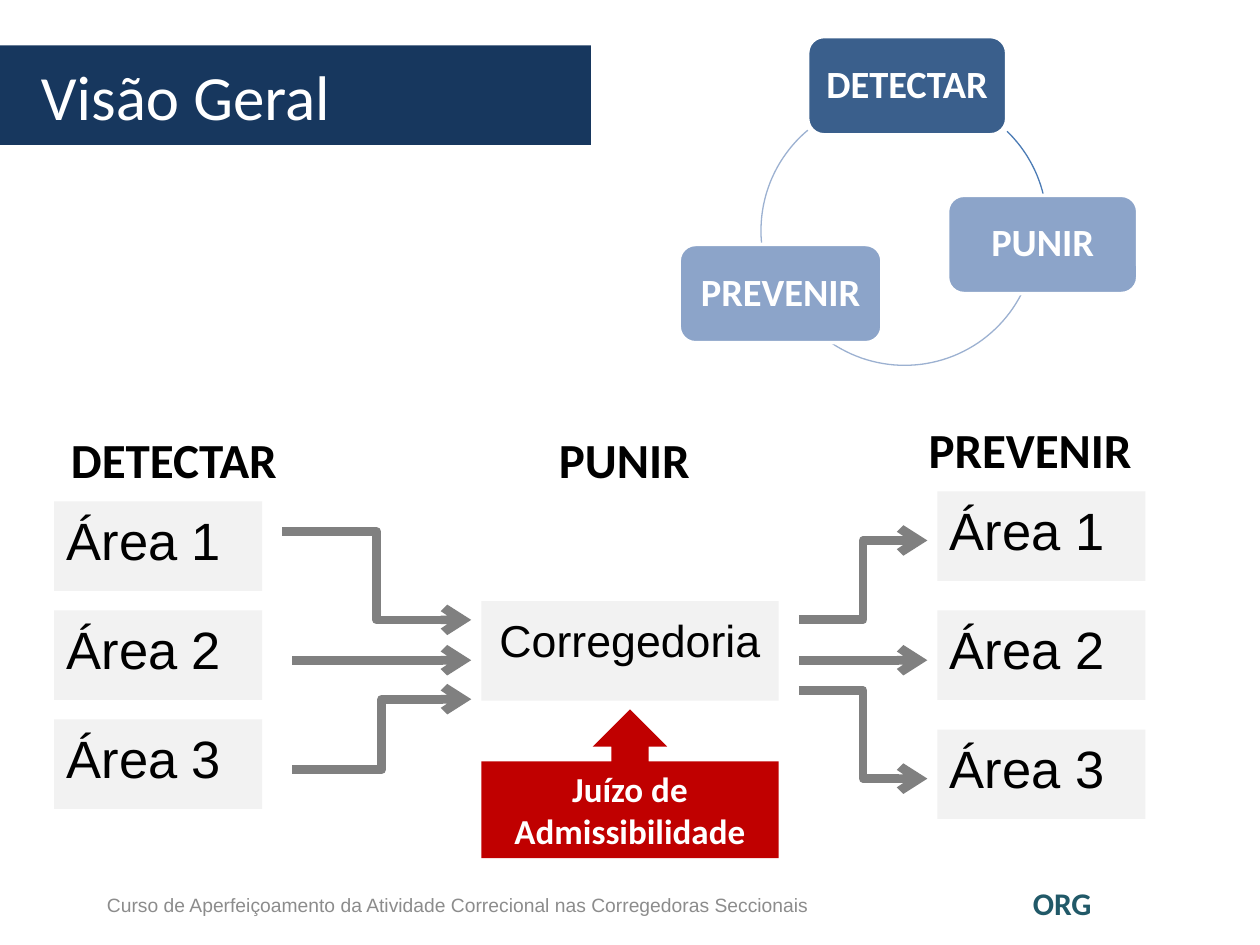
from dataclasses import dataclass
from math import cos, radians, sin

from lxml.etree import SubElement
from pptx import Presentation
from pptx.dml.color import RGBColor
from pptx.enum.shapes import MSO_CONNECTOR, MSO_SHAPE
from pptx.enum.text import MSO_ANCHOR, PP_ALIGN
from pptx.oxml.ns import qn
from pptx.util import Inches, Pt

COLS, ROWS = 100, 75
WIDE, HIGH = Inches(10), Inches(7.5)
HUES = {
    "navy": "17375E", "steel": "3A5F8C", "sky": "8CA4C9", "arc": "4B7BB5",
    "pale": "9CB1D1", "red": "C00000", "panel": "F2F2F2", "wire": "808080",
    "foot": "8C8C8C", "teal": "215968", "white": "FFFFFF", "black": "000000",
}


@dataclass
class Box:
    """A place on the grid of columns and rows."""
    col: float
    row: float
    wide: float
    high: float


@dataclass
class Style:
    """How a piece of text looks and sits."""
    size: float
    hue: str = "black"
    font: str = "Calibri"
    bold: bool = True
    align: PP_ALIGN = PP_ALIGN.CENTER
    anchor: MSO_ANCHOR = MSO_ANCHOR.MIDDLE
    left: float = 1
    top: float = 0.5
    lead: float = 1


@dataclass
class Wire:
    """An arrow between two grid points."""
    col: float
    row: float
    end: float
    stop: float


@dataclass
class Arc:
    """A part of a circle, in degrees clockwise from the right."""
    col: float
    row: float
    first: float
    last: float
    hue: str


def across(cols: float) -> int:
    """Turn columns into a length."""
    return round(WIDE * cols / COLS)


def down(rows: float) -> int:
    """Turn rows into a length."""
    return round(HIGH * rows / ROWS)


def tint(name: str) -> RGBColor:
    """Look up a colour."""
    return RGBColor.from_string(HUES[name])


def place(box: Box) -> tuple:
    """Give the left, top, width and height of a box."""
    return across(box.col), down(box.row), across(box.wide), down(box.high)


def write(shape, text: str, style: Style) -> None:
    """Set one run of text in a shape."""
    frame = shape.text_frame
    frame.word_wrap = True
    frame.vertical_anchor = style.anchor
    frame.margin_left, frame.margin_right = across(style.left), across(1)
    frame.margin_top, frame.margin_bottom = down(style.top), down(0.5)
    para = frame.paragraphs[0]
    para.alignment, para.line_spacing = style.align, style.lead
    run = para.add_run()
    run.text = text
    font = run.font
    font.name, font.size, font.bold = style.font, Pt(style.size), style.bold
    font.color.rgb = tint(style.hue)


def label(slide, box: Box, text: str, style: Style) -> None:
    """Add a plain text box."""
    write(slide.shapes.add_textbox(*place(box)), text, style)


def block(slide, kind: MSO_SHAPE, box: Box, fill: str, text: str,
          style: Style, edge: bool = False) -> None:
    """Add a filled shape with text."""
    shape = slide.shapes.add_shape(kind, *place(box))
    shape.shadow.inherit = False
    shape.fill.solid()
    shape.fill.fore_color.rgb = tint(fill)
    if edge:
        shape.line.color.rgb, shape.line.width = tint("white"), Pt(2)
    else:
        shape.line.fill.background()
    write(shape, text, style)


def link(slide, wire: Wire) -> None:
    """Add a grey arrow, bent when its ends differ in row."""
    flat = wire.row == wire.stop
    kind = MSO_CONNECTOR.STRAIGHT if flat else MSO_CONNECTOR.ELBOW
    line = slide.shapes.add_connector(
        kind, across(wire.col), down(wire.row), across(wire.end), down(wire.stop))
    line.line.color.rgb, line.line.width = tint("wire"), Pt(5)
    SubElement(line.line._get_or_add_ln(), qn("a:tailEnd"), type="arrow")
    SubElement(line._element.spPr, qn("a:effectLst"))


def curve(slide, arc: Arc, radius: float = 10.4, steps: int = 40) -> None:
    """Draw an open arc."""
    turns = [radians(arc.first + (arc.last - arc.first) * i / steps)
             for i in range(steps + 1)]
    dots = [(across(arc.col + radius * cos(t)), down(arc.row + radius * sin(t)))
            for t in turns]
    path = slide.shapes.build_freeform(*dots[0])
    path.add_line_segments(dots[1:], close=False)
    shape = path.convert_to_shape()
    shape.shadow.inherit = False
    shape.fill.background()
    shape.line.color.rgb, shape.line.width = tint(arc.hue), Pt(0.75)


def main() -> None:
    """Build the slide."""
    deck = Presentation()
    deck.slide_width, deck.slide_height = WIDE, HIGH
    slide = deck.slides.add_slide(deck.slide_layouts[5])
    left, top = PP_ALIGN.LEFT, MSO_ANCHOR.TOP

    title = slide.shapes.title
    title.left, title.top, title.width, title.height = place(Box(0, 3.6, 46.9, 7.9))
    title.fill.solid()
    title.fill.fore_color.rgb = tint("navy")
    write(title, "Visão Geral", Style(36, "white", bold=False, align=left, left=3.25))

    label(slide, Box(7.5, 69.4, 86.2, 4.8),
          "Curso de Aperfeiçoamento da Atividade Correcional nas Corregedoras Seccionais",
          Style(11, "foot", "Arial", False, left))
    label(slide, Box(79.2, 69.7, 10.2, 4), "ORG", Style(18, "teal", anchor=top))

    head = Style(28, lead=0.9)
    for text, col, row, wide in (("DETECTAR", 2.8, 32.8, 22),
                                 ("PUNIR", 39, 32.8, 21.1),
                                 ("PREVENIR", 70.5, 32, 22.5)):
        label(slide, Box(col, row, wide, 7.8), text, head)

    area = Style(30, "black", "Arial", False, left, top)
    for col, row, step in ((4.3, 39.8, 8.65), (74.4, 39, 9.45)):
        for i in range(3):
            block(slide, MSO_SHAPE.RECTANGLE, Box(col, row + i * step, 16.5, 7.1),
                  "panel", f"Área {i + 1}", area)
    block(slide, MSO_SHAPE.RECTANGLE, Box(38.2, 47.7, 23.6, 7.9), "panel",
          "Corregedoria", Style(25.5, "black", "Arial", False, anchor=top, top=0.9))

    for wire in (Wire(22.4, 42.2, 37.4, 49.2), Wire(23.2, 52.4, 37.4, 52.4),
                 Wire(23.2, 61.1, 37.4, 55.5), Wire(63.4, 49.2, 73.6, 42.9),
                 Wire(63.4, 52.4, 73.6, 52.4), Wire(63.4, 54.8, 73.6, 61.8)):
        link(slide, wire)

    for arc in (Arc(72.7, 17.9, -46, -14, "arc"), Arc(71.8, 18.6, 27, 124, "pale"),
                Arc(70.8, 18.3, 174.5, 230, "pale")):
        curve(slide, arc)
    node = Style(22, "white", lead=0.9)
    for text, box, fill in (("DETECTAR", Box(64.1, 2.9, 15.8, 7.8), "steel"),
                            ("PUNIR", Box(75.2, 15.5, 15.1, 7.8), "sky"),
                            ("PREVENIR", Box(53.9, 19.4, 16.1, 7.8), "sky")):
        block(slide, MSO_SHAPE.ROUNDED_RECTANGLE, box, fill, text, node, True)

    block(slide, MSO_SHAPE.UP_ARROW_CALLOUT, Box(38.2, 56.3, 23.6, 11.8), "red",
          "Juízo de Admissibilidade", Style(20, "white"))
    deck.save("out.pptx")


if __name__ == "__main__":
    main()
